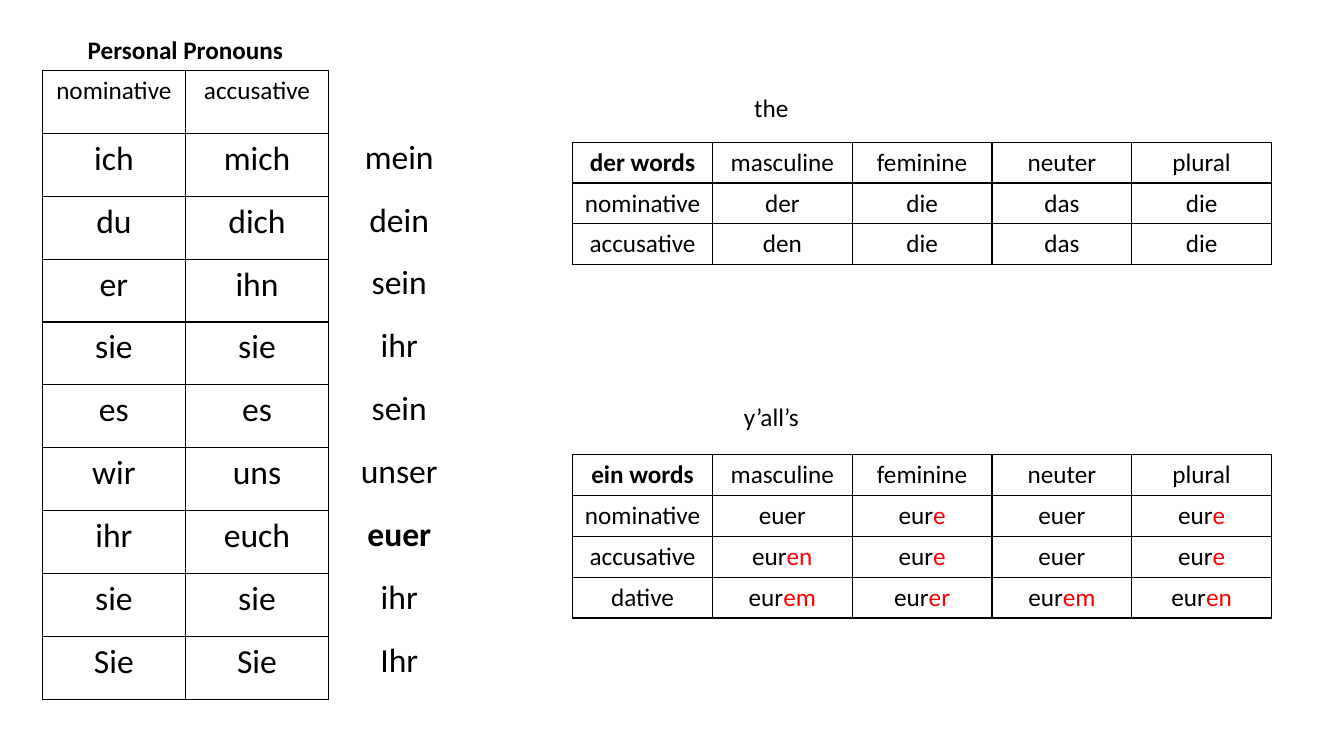
from lxml import etree
from pptx import Presentation
from pptx.dml.color import RGBColor
from pptx.enum.text import MSO_ANCHOR, MSO_AUTO_SIZE, PP_ALIGN
from pptx.oxml.ns import qn
from pptx.util import Inches, Pt

CENTER = PP_ALIGN.CENTER
TOP = MSO_ANCHOR.TOP
NO_AUTOFIT = MSO_AUTO_SIZE.NONE
TITLE_ONLY = 5

COLORS = {"text": "000000", "ending": "FF0000", "border": "000000"}
FONT = "Calibri"
SMALL, LARGE = 18, 24

# Shares of the slide's size, in percent.
PRONOUN_ROW, ARTICLE_ROW = 8.32, 5.41
ARTICLE_LEFT, ARTICLE_WIDTH = 42.61, 52
LABEL_LEFT, LABEL_WIDTH, LABEL_HEIGHT = 47.04, 20.7, 5.33

PRONOUNS = [
    ["nominative", "accusative"],
    ["ich", "mich"],
    ["du", "dich"],
    ["er", "ihn"],
    ["sie", "sie"],
    ["es", "es"],
    ["wir", "uns"],
    ["ihr", "euch"],
    ["sie", "sie"],
    ["Sie", "Sie"],
]
POSSESSIVES = [[word] for word in "mein dein sein ihr sein unser euer ihr Ihr".split()]
GENDERS = ["masculine", "feminine", "neuter", "plural"]

# A bar separates a stem from its highlighted ending.
DER_WORDS = [
    ["der words", *GENDERS],
    ["nominative", "der", "die", "das", "die"],
    ["accusative", "den", "die", "das", "die"],
]
EIN_WORDS = [
    ["ein words", *GENDERS],
    ["nominative", "euer", "eur|e", "euer", "eur|e"],
    ["accusative", "eur|en", "eur|e", "euer", "eur|e"],
    ["dative", "eur|em", "eur|er", "eur|em", "eur|en"],
]


class GrammarSlide:
    def __init__(self, prs):
        self.width, self.height = prs.slide_width, prs.slide_height
        self.slide = prs.slides.add_slide(prs.slide_layouts[TITLE_ONLY])

    def place(self, left, top, width, height):
        """Turn percentages of the slide into lengths."""
        return (round(self.width * left / 100), round(self.height * top / 100),
                round(self.width * width / 100), round(self.height * height / 100))

    def add_words(self, frame, text, size=SMALL, bold=False):
        paragraph = frame.paragraphs[0]
        paragraph.alignment = CENTER
        for part, color in zip(text.split("|"), ("text", "ending")):
            run = paragraph.add_run()
            run.text = part
            run.font.name = FONT
            run.font.size = Pt(size)
            run.font.bold = bold
            run.font.color.rgb = RGBColor.from_string(COLORS[color])

    def title(self, text, left, top):
        heading = self.slide.shapes.title
        heading.left, heading.top, heading.width, heading.height = self.place(
            left, top, LABEL_WIDTH, LABEL_HEIGHT)
        heading.text_frame.auto_size = NO_AUTOFIT
        heading.text_frame.vertical_anchor = TOP
        self.add_words(heading.text_frame, text, bold=True)

    def label(self, text, top):
        box = self.slide.shapes.add_textbox(
            *self.place(LABEL_LEFT, top, LABEL_WIDTH, LABEL_HEIGHT))
        box.text_frame.word_wrap = True
        self.add_words(box.text_frame, text)

    def border(self, cell, visible):
        properties = cell._tc.get_or_add_tcPr()
        for position, side in enumerate(("lnL", "lnR", "lnT", "lnB")):
            line = etree.Element(qn(f"a:{side}"), w=str(Pt(1)))
            if visible:
                fill = etree.SubElement(line, qn("a:solidFill"))
                etree.SubElement(fill, qn("a:srgbClr"), val=COLORS["border"])
            else:
                etree.SubElement(line, qn("a:noFill"))
            properties.insert(position, line)

    def table(self, rows, left, top, width, row_height, size=SMALL,
              head_size=None, bold_word=None, bordered=True):
        area = self.place(left, top, width, row_height * len(rows))
        table = self.slide.shapes.add_table(len(rows), len(rows[0]), *area).table
        table.first_row = table.horz_banding = False
        for r, words in enumerate(rows):
            for c, word in enumerate(words):
                cell = table.cell(r, c)
                cell.fill.background()
                self.border(cell, bordered)
                word_size = head_size if head_size and r == 0 else size
                self.add_words(cell.text_frame, word, word_size, word == bold_word)


def main():
    prs = Presentation()
    prs.slide_width, prs.slide_height = Inches(13.33), Inches(7.5)
    page = GrammarSlide(prs)

    page.title("Personal Pronouns", 3.45, 3.87)
    page.table(PRONOUNS, 3.15, 9.33, 21.3, PRONOUN_ROW, LARGE, head_size=SMALL)
    page.table(POSSESSIVES, 24.98, 17.5, 9.45, PRONOUN_ROW, LARGE,
               bold_word="euer", bordered=False)

    for label, label_top, rows, table_top in (
            ("the", 11.6, DER_WORDS, 18.8),
            ("y’all’s", 52.4, EIN_WORDS, 60.13)):
        page.label(label, label_top)
        page.table(rows, ARTICLE_LEFT, table_top, ARTICLE_WIDTH, ARTICLE_ROW,
                   bold_word=rows[0][0])

    prs.save("out.pptx")


if __name__ == "__main__":
    main()
